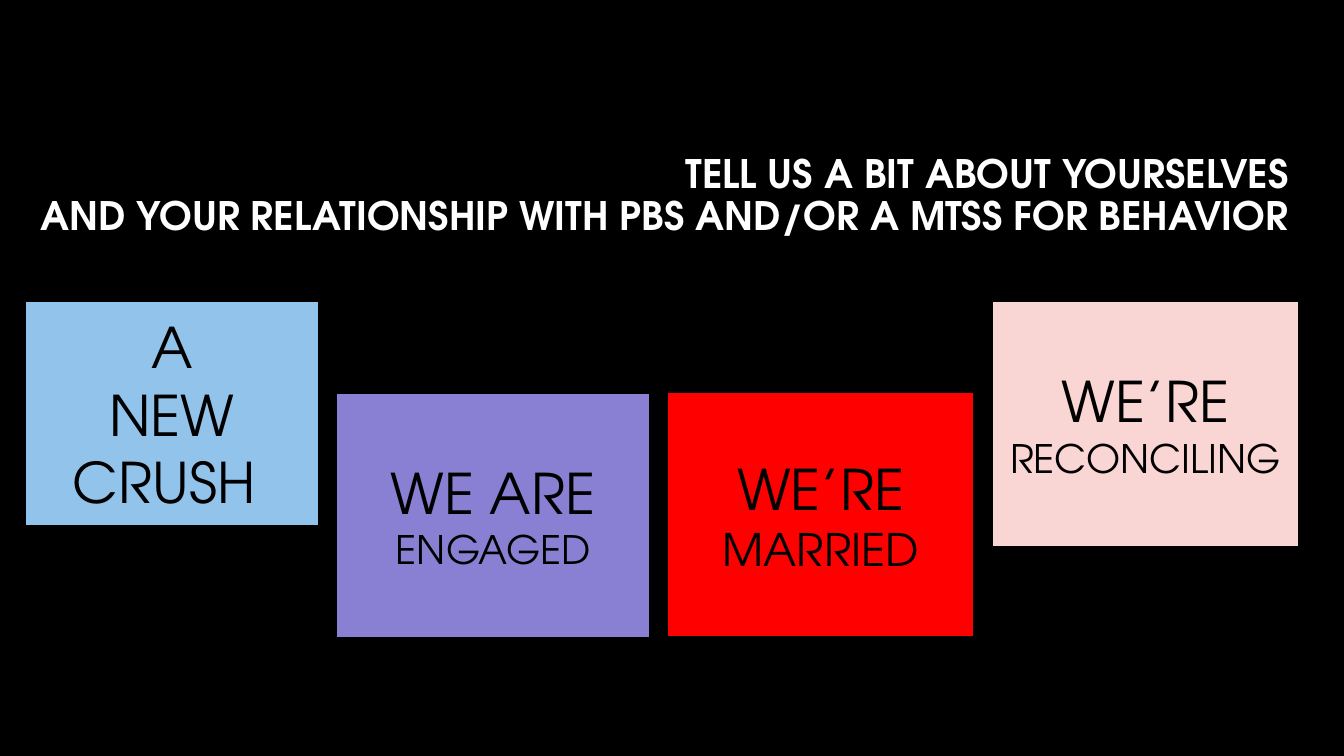
from pptx import Presentation
from pptx.dml.color import RGBColor
from pptx.enum.shapes import MSO_SHAPE
from pptx.enum.text import MSO_ANCHOR, MSO_AUTO_SIZE, PP_ALIGN
from pptx.util import Inches, Pt

RECTANGLE = MSO_SHAPE.RECTANGLE
MIDDLE = MSO_ANCHOR.MIDDLE
NO_AUTOFIT = MSO_AUTO_SIZE.NONE
CENTER, RIGHT = PP_ALIGN.CENTER, PP_ALIGN.RIGHT

TITLE_ONLY_LAYOUT = 5
FONT = "TeX Gyre Adventor"
BLACK, WHITE = "000000", "FFFFFF"

TITLE = ("TELL US A BIT ABOUT YOURSELVES\v"
         "AND YOUR RELATIONSHIP WITH PBS AND/OR A MTSS FOR BEHAVIOR")

# Left, top, width, height, fill, paragraphs of (text, size) runs
STAGES = [
    (0.25, 2.99, 2.91, 2.23, "92C3EA",
     [[("A", 40)], [("NEW", 40)], [("CRUSH ", 40)]]),
    (3.34, 3.9, 3.1, 2.43, "8A80D3", [[("WE ARE ", 40), ("ENGAGED", 28)]]),
    (6.62, 3.89, 3.04, 2.43, "FF0000", [[("WE’RE ", 40), ("MARRIED", 32)]]),
    (9.84, 2.99, 3.04, 2.43, "F9D5D4", [[("WE’RE ", 40), ("RECONCILING", 28)]]),
]


def color(hex_value):
    return RGBColor.from_string(hex_value)


def place(shape, left, top, width, height):
    shape.left, shape.top = Inches(left), Inches(top)
    shape.width, shape.height = Inches(width), Inches(height)


def format_paragraph(paragraph, alignment, font_color):
    paragraph.alignment = alignment
    paragraph.font.name = FONT
    paragraph.font.color.rgb = color(font_color)


def add_title(slide):
    title = slide.shapes.title
    place(title, 0.25, 1.25, 12.63, 1.41)
    frame = title.text_frame
    frame.text = TITLE
    frame.auto_size = NO_AUTOFIT
    frame.vertical_anchor = MIDDLE
    paragraph = frame.paragraphs[0]
    format_paragraph(paragraph, RIGHT, WHITE)
    paragraph.line_spacing = 0.9
    paragraph.font.size = Pt(28)
    paragraph.font.bold = True


def add_stage(slide, left, top, width, height, fill, paragraphs):
    card = slide.shapes.add_shape(
        RECTANGLE, Inches(left), Inches(top), Inches(width), Inches(height))
    card.shadow.inherit = False
    card.fill.solid()
    card.fill.fore_color.rgb = color(fill)
    card.line.color.rgb = color(BLACK)
    card.line.width = Pt(1)
    frame = card.text_frame
    frame.word_wrap = True
    frame.vertical_anchor = MIDDLE
    for index, runs in enumerate(paragraphs):
        paragraph = frame.add_paragraph() if index else frame.paragraphs[0]
        format_paragraph(paragraph, CENTER, BLACK)
        for text, size in runs:
            run = paragraph.add_run()
            run.text = text
            run.font.size = Pt(size)


def main():
    presentation = Presentation()
    presentation.slide_width = Inches(13.33)
    presentation.slide_height = Inches(7.5)
    slide = presentation.slides.add_slide(
        presentation.slide_layouts[TITLE_ONLY_LAYOUT])

    # Black background
    slide.background.fill.solid()
    slide.background.fill.fore_color.rgb = color(BLACK)

    # Heading and relationship stages
    add_title(slide)
    for stage in STAGES:
        add_stage(slide, *stage)

    presentation.save("out.pptx")


if __name__ == "__main__":
    main()
